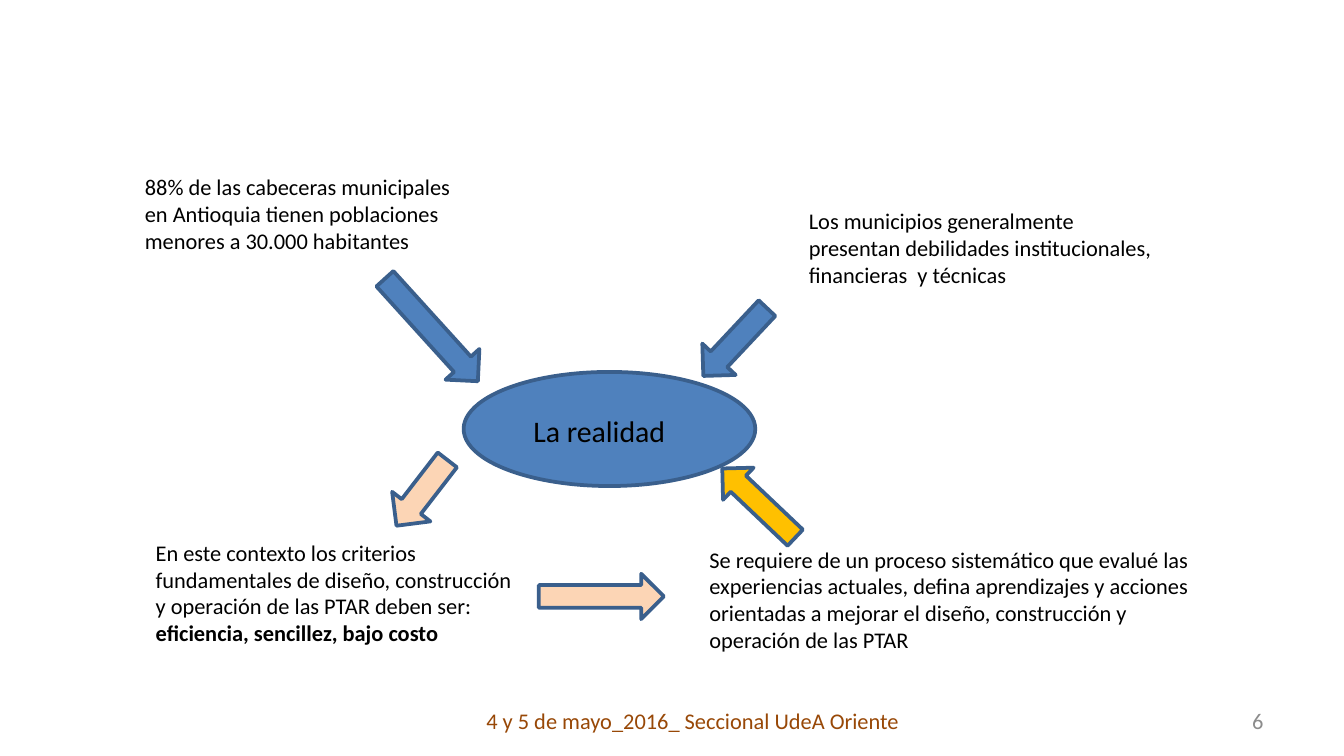
import pptx
import pptx.util
import pptx.dml.color
import pptx.enum.shapes
import pptx.enum.text

HUES = {
    "blue": "4F81BD", "edge": "3A5F8C", "peach": "FCD5B5", "gold": "FFC000",
    "black": "000000", "brown": "984807", "gray": "8C8C8C",
}
KIND = pptx.enum.shapes.MSO_SHAPE
SIDE = pptx.enum.text.PP_ALIGN
FIT = pptx.enum.text.MSO_AUTO_SIZE
MID = pptx.enum.text.MSO_ANCHOR

deck = pptx.Presentation()
deck.slide_width = pptx.util.Inches(10)
deck.slide_height = pptx.util.Inches(5.625)
slide = deck.slides.add_slide(deck.slide_layouts[6])


def hue(name):
    return pptx.dml.color.RGBColor.from_string(HUES[name])


def place(x, y, w, h):
    """Turn percent shares of the slide into left, top, width, height."""
    wide, high = deck.slide_width, deck.slide_height
    return [int(part * full / 100)
            for part, full in ((x, wide), (y, high), (w, wide), (h, high))]


# Centre ellipse and arrows: kind, box, turn, fill
forms = [
    (KIND.OVAL, (34.5, 49.2, 21.7, 15.1), 0, "blue"),
    (KIND.DOWN_ARROW, (53, 39.1, 3.4, 12.3), 43.2, "blue"),
    (KIND.DOWN_ARROW, (30.4, 34.5, 3.4, 18.3), 317.8, "blue"),
    (KIND.DOWN_ARROW, (29.6, 59.7, 3.6, 11), 37.7, "peach"),
    (KIND.RIGHT_ARROW, (40.1, 75.9, 9.3, 6), 0, "peach"),
    (KIND.DOWN_ARROW, (54.8, 59.9, 3.3, 13.3), 133.5, "gold"),
]
for kind, box, turn, fill in forms:
    form = slide.shapes.add_shape(kind, *place(*box))
    form.rotation = turn
    form.shadow.inherit = False
    form.fill.solid()
    form.fill.fore_color.rgb = hue(fill)
    form.line.color.rgb = hue("edge")
    form.line.width = pptx.util.Pt(2)

# Texts: box, runs, size, colour, frame format, alignment
grow = {"word_wrap": True, "auto_size": FIT.SHAPE_TO_FIT_TEXT}
foot = {"word_wrap": True, "vertical_anchor": MID.MIDDLE}
notes = [
    ((38.7, 53.7, 13.9, 6.6), ["La realidad"], 16, "black", grow, SIDE.LEFT),
    ((9.8, 22, 26.3, 12.6),
     ["88% de las cabeceras municipales en Antioquia tienen poblaciones "
      "menores a 30.000 habitantes"], 12, "black", grow, SIDE.LEFT),
    ((59.2, 26.5, 28.6, 12.6),
     ["Los municipios generalmente presentan debilidades institucionales, "
      "financieras  y técnicas"], 12, "black", grow, SIDE.LEFT),
    ((10.6, 70.4, 29.5, 16.2),
     ["En este contexto los criterios fundamentales de diseño, construcción "
      "y operación de las PTAR deben ser: ",
      "eficiencia, sencillez, bajo costo"], 12, "black", grow, SIDE.LEFT),
    ((51.8, 71.3, 39.9, 16.2),
     ["Se requiere de un proceso sistemático que evalué las experiencias "
      "actuales, defina aprendizajes y acciones orientadas a mejorar el "
      "diseño, construcción y operación de las PTAR"],
     12, "black", grow, SIDE.LEFT),
    ((34.2, 92.6, 34.7, 5.3), ["4 y 5 de mayo_2016_ Seccional UdeA Oriente"],
     12, "brown", foot, SIDE.CENTER),
    ((71.7, 92.6, 23.3, 5.3), ["6"], 12, "gray", foot, SIDE.RIGHT),
]
for box, runs, size, tint, looks, side in notes:
    frame = slide.shapes.add_textbox(*place(*box)).text_frame
    for key, value in looks.items():
        setattr(frame, key, value)
    para = frame.paragraphs[0]
    para.alignment = side
    for rank, words in enumerate(runs):
        run = para.add_run()
        run.text = words
        style = {"name": "Calibri", "size": pptx.util.Pt(size), "bold": rank > 0}
        for key, value in style.items():
            setattr(run.font, key, value)
        run.font.color.rgb = hue(tint)

deck.save("out.pptx")
